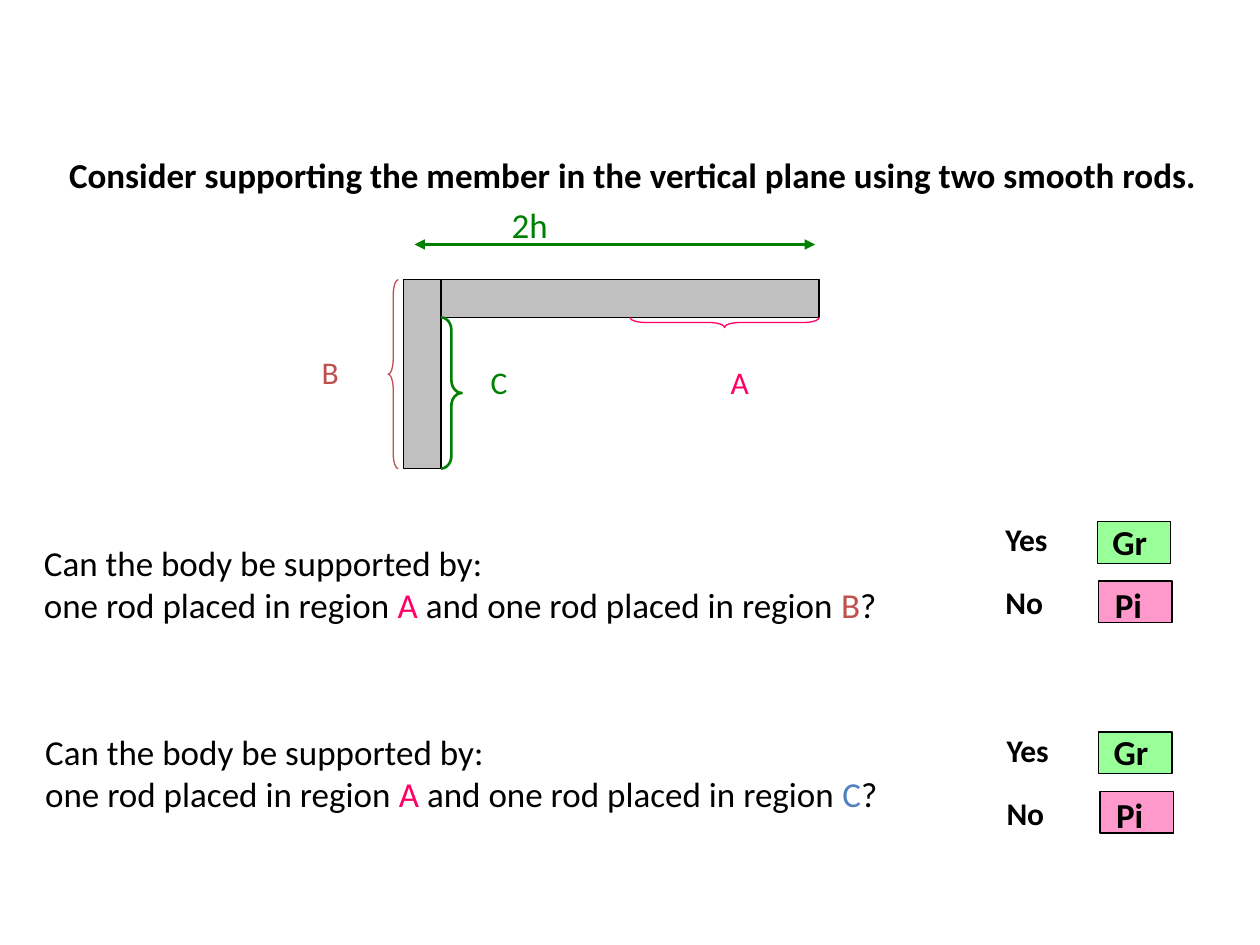
from dataclasses import dataclass
from typing import Any

from lxml import etree
from pptx import Presentation
from pptx import util as u
from pptx.dml import color
from pptx.enum import shapes, text
from pptx.oxml import ns

BLACK, GREEN, PINK, RED, BLUE = "000000", "008000", "FF0066", "C0504D", "4F81BD"


def rgb(value):
    return color.RGBColor.from_string(value)


def write(paragraph, content, font="Calibri", size=20, ink=BLACK, bold=False):
    run = paragraph.add_run()
    run.text = content
    run.font.name = font
    run.font.size = u.Pt(size)
    run.font.bold = bold
    run.font.color.rgb = rgb(ink)


@dataclass
class Sketch:
    slide: Any
    thin: float = 0.75
    thick: float = 1.5

    def label(self, at, *lines, centred=False, **style):
        frame = self.slide.shapes.add_textbox(*map(u.Pt, at)).text_frame
        frame.word_wrap = True
        for index, line in enumerate(lines):
            paragraph = frame.add_paragraph() if index else frame.paragraphs[0]
            paragraph.alignment = text.PP_ALIGN.CENTER if centred else text.PP_ALIGN.LEFT
            for content, ink in line:
                write(paragraph, content, ink=ink, **style)

    def outline(self, kind, at, ink, weight):
        shape = self.slide.shapes.add_shape(kind, *map(u.Pt, at))
        shape.shadow.inherit = False
        shape.line.color.rgb = rgb(ink)
        shape.line.width = u.Pt(weight)
        return shape

    def box(self, at, fill):
        shape = self.outline(shapes.MSO_SHAPE.RECTANGLE, at, BLACK, self.thin)
        shape.fill.solid()
        shape.fill.fore_color.rgb = rgb(fill)

    def brace(self, at, ink, weight, curl, turn=0):
        shape = self.outline(shapes.MSO_SHAPE.RIGHT_BRACE, at, ink, weight)
        shape.fill.background()
        shape.adjustments[0] = curl
        shape.rotation = turn

    def dimension(self, left, right, y, ink):
        line = self.slide.shapes.add_connector(
            shapes.MSO_CONNECTOR.STRAIGHT, u.Pt(left), u.Pt(y), u.Pt(right), u.Pt(y))
        line.line.color.rgb = rgb(ink)
        line.line.width = u.Pt(self.thick)
        stroke = line.line._get_or_add_ln()
        for end in ("a:headEnd", "a:tailEnd"):
            etree.SubElement(stroke, ns.qn(end), type="triangle")
        etree.SubElement(line._element.spPr, ns.qn("a:effectLst"))


def question(sketch, left, top, region, ink):
    sketch.label(
        (left, top, 504, 55.4),
        [("Can the body be supported by:", BLACK)],
        [("one rod placed in region ", BLACK), ("A", PINK),
         (" and one rod placed in region ", BLACK), (region, ink), ("?", BLACK)])


def answers(sketch, left, top):
    choices = [("Yes", "Gr", "99FF99", 0, 59.8, 4.3, 61.2),
               ("No", "Pi", "FF99CC", 36, 60.5, 2.2, 62.6)]
    for answer, card, fill, drop, box_x, box_y, card_x in choices:
        y = top + drop
        sketch.label((left, y, 52, 36), [(answer, BLACK)], size=18, bold=True)
        sketch.box((left + box_x, y + box_y, 41.8, 23.8), fill)
        sketch.label((left + card_x, y, 39, 31), [(card, BLACK)], bold=True)


def member(sketch):
    left, top, depth, height, span = 230.4, 159.8, 21.6, 108, 216
    inner, under = left + depth, top + depth
    sketch.box((left, top, depth, height), "C0C0C0")
    sketch.box((inner, top, span, depth), "C0C0C0")
    sketch.brace((221.8, top, 5.8, height), RED, sketch.thin, 1.5, turn=180)
    sketch.brace((inner, under, 11.9, height - depth), GREEN, sketch.thick, 0.606)
    sketch.brace((411.1, 130.3, 5.8, height), PINK, sketch.thin, 1.5, turn=90)
    for name, x, y, ink in [("C", 264.2, 203.8, GREEN), ("A", 401.8, 203.8, PINK),
                            ("B", 167.8, 198, RED)]:
        sketch.label((x, y, 41.8, 36), [(name, ink)], centred=True, size=18)
    sketch.dimension(236.9, 465.8, 139.7, GREEN)
    sketch.label((278.6, 113, 48.2, 31), [("2h", GREEN)], centred=True)


def main():
    deck = Presentation()
    deck.slide_width, deck.slide_height = u.Pt(720), u.Pt(540)
    sketch = Sketch(deck.slides.add_slide(deck.slide_layouts[6]))
    question(sketch, 18, 306, "B", RED)
    question(sketch, 18.7, 414, "C", BLUE)
    answers(sketch, 567.4, 293.8)
    answers(sketch, 568.1, 414)
    member(sketch)
    sketch.label(
        (32.4, 84.2, 684, 55.4),
        [("Consider supporting the member in the vertical plane using two smooth rods.", BLACK)],
        bold=True)
    deck.save("out.pptx")


if __name__ == "__main__":
    main()
